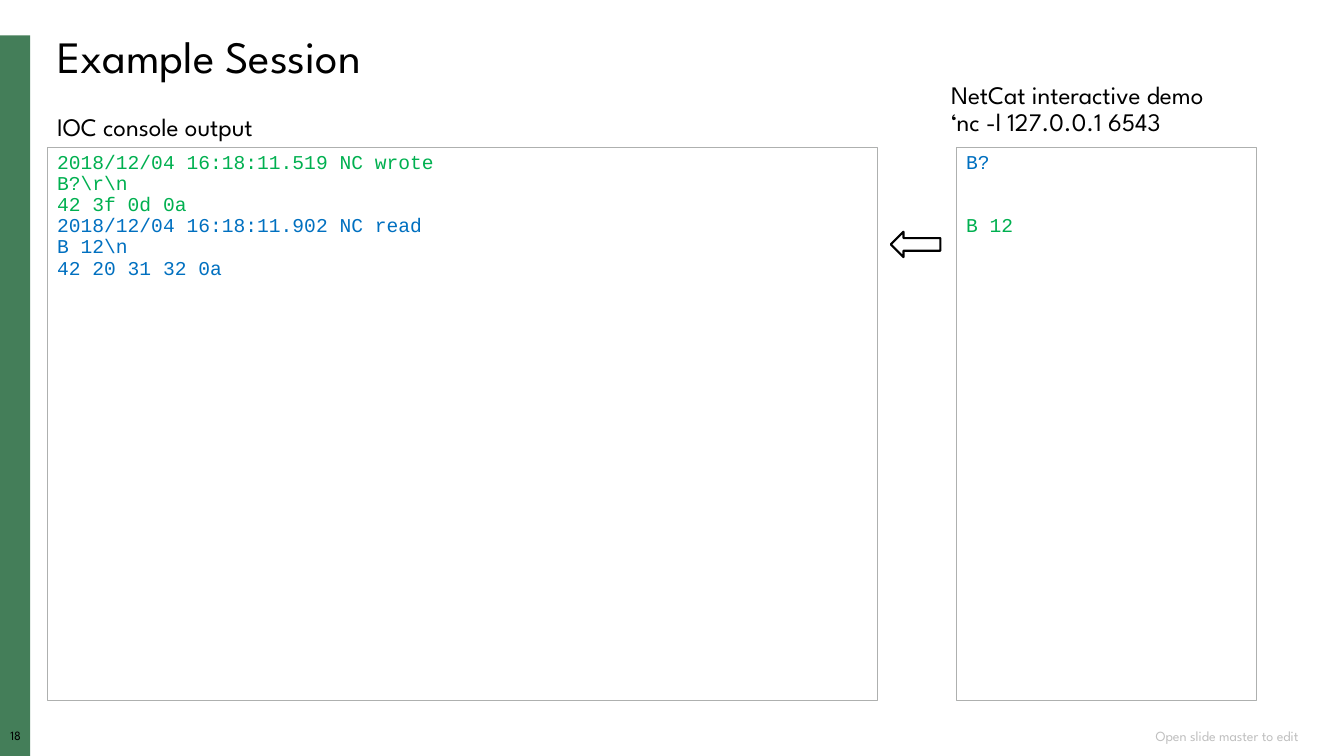
from dataclasses import dataclass

from pptx import Presentation
from pptx.dml.color import RGBColor
from pptx.enum.shapes import MSO_SHAPE
from pptx.enum.text import MSO_ANCHOR, PP_ALIGN
from pptx.util import Cm, Pt


@dataclass(frozen=True)
class Theme:
    ink: str = "000000"
    bar: str = "447E59"
    frame: str = "AEB0AF"
    footer: str = "BFBFBF"
    sent: str = "00B050"
    received: str = "0070C0"
    text_font: str = "League Spartan"
    code_font: str = "Courier New"
    title_size: int = 32
    label_size: int = 18
    code_size: int = 14
    footer_size: int = 10
    number_size: int = 9


THEME = Theme()
PANEL_TOP, PANEL_HEIGHT = 3.71, 13.94
LEFT = 1.19


def add_lines(frame, lines, font, size, spacing=0.9, align=PP_ALIGN.LEFT):
    """Write (text, colour, points before) lines, one paragraph each."""
    frame.word_wrap = True
    for index, (text, colour, before) in enumerate(lines):
        para = frame.paragraphs[0] if index == 0 else frame.add_paragraph()
        layout = {"alignment": align, "line_spacing": spacing, "space_before": Pt(before)}
        for name, value in layout.items():
            setattr(para, name, value)
        span = para.add_run()
        span.text = text
        for name, value in {"name": font, "size": Pt(size)}.items():
            setattr(span.font, name, value)
        span.font.color.rgb = RGBColor.from_string(colour)


def add_label(page, area, lines, size, colour=THEME.ink, anchor=MSO_ANCHOR.TOP,
              inset=None, **layout):
    box = page.shapes.add_textbox(*map(Cm, area))
    frame = box.text_frame
    frame.vertical_anchor = anchor
    if inset is not None:
        for side in ("left", "top", "right", "bottom"):
            setattr(frame, f"margin_{side}", Cm(inset))
    add_lines(frame, [(line, colour, 0) for line in lines], THEME.text_font, size, **layout)


def add_outline(page, kind, area, fill=None, line=None, width=0.75):
    shape = page.shapes.add_shape(kind, *map(Cm, area))
    shape.shadow.inherit = False
    if fill:
        shape.fill.solid()
        shape.fill.fore_color.rgb = RGBColor.from_string(fill)
    else:
        shape.fill.background()
    if line:
        shape.line.color.rgb = RGBColor.from_string(line)
        shape.line.width = Pt(width)
    else:
        shape.line.fill.background()
    return shape


def add_console(page, left, width, lines):
    area = (left, PANEL_TOP, width, PANEL_HEIGHT)
    panel = add_outline(page, MSO_SHAPE.RECTANGLE, area, line=THEME.frame)
    panel.text_frame.vertical_anchor = MSO_ANCHOR.TOP
    add_lines(panel.text_frame, lines, THEME.code_font, THEME.code_size)


def main():
    deck = Presentation()
    deck.slide_width, deck.slide_height = Cm(33.87), Cm(19.05)
    page = deck.slides.add_slide(deck.slide_layouts[6])

    add_outline(page, MSO_SHAPE.RECTANGLE, (0, 0.89, 0.76, 18.16), fill=THEME.bar)
    add_label(page, (0, 18.39, 0.79, 0.43), ["18"], THEME.number_size,
              inset=0, align=PP_ALIGN.CENTER)
    add_label(page, (22.25, 18.29, 10.72, 0.51), ["Open slide master to edit"],
              THEME.footer_size, THEME.footer, MSO_ANCHOR.MIDDLE,
              spacing=1.0, align=PP_ALIGN.RIGHT)

    add_label(page, (LEFT, 0.76, 31.75, 1.5), ["Example Session"], THEME.title_size)
    add_label(page, (LEFT, 2.77, 6.6, 0.94), ["IOC console output"], THEME.label_size)
    add_label(page, (23.72, 1.96, 8.36, 1.65),
              ["NetCat interactive demo", "‘nc -l 127.0.0.1 6543"], THEME.label_size)

    wrote = ["2018/12/04 16:18:11.519 NC wrote", r"B?\r\n", "42 3f 0d 0a"]
    read = ["2018/12/04 16:18:11.902 NC read", r"B 12\n", "42 20 31 32 0a"]
    add_console(page, LEFT, 20.93, [(text, THEME.sent, 0) for text in wrote]
                + [(text, THEME.received, 0) for text in read])
    # The reply lines up with the fourth console line.
    add_console(page, 24.1, 7.57, [("B?", THEME.received, 0), ("B 12", THEME.sent, 30.25)])
    add_outline(page, MSO_SHAPE.LEFT_ARROW, (22.45, 5.84, 1.25, 0.64),
                line=THEME.ink, width=1.5)

    deck.save("out.pptx")


if __name__ == "__main__":
    main()
